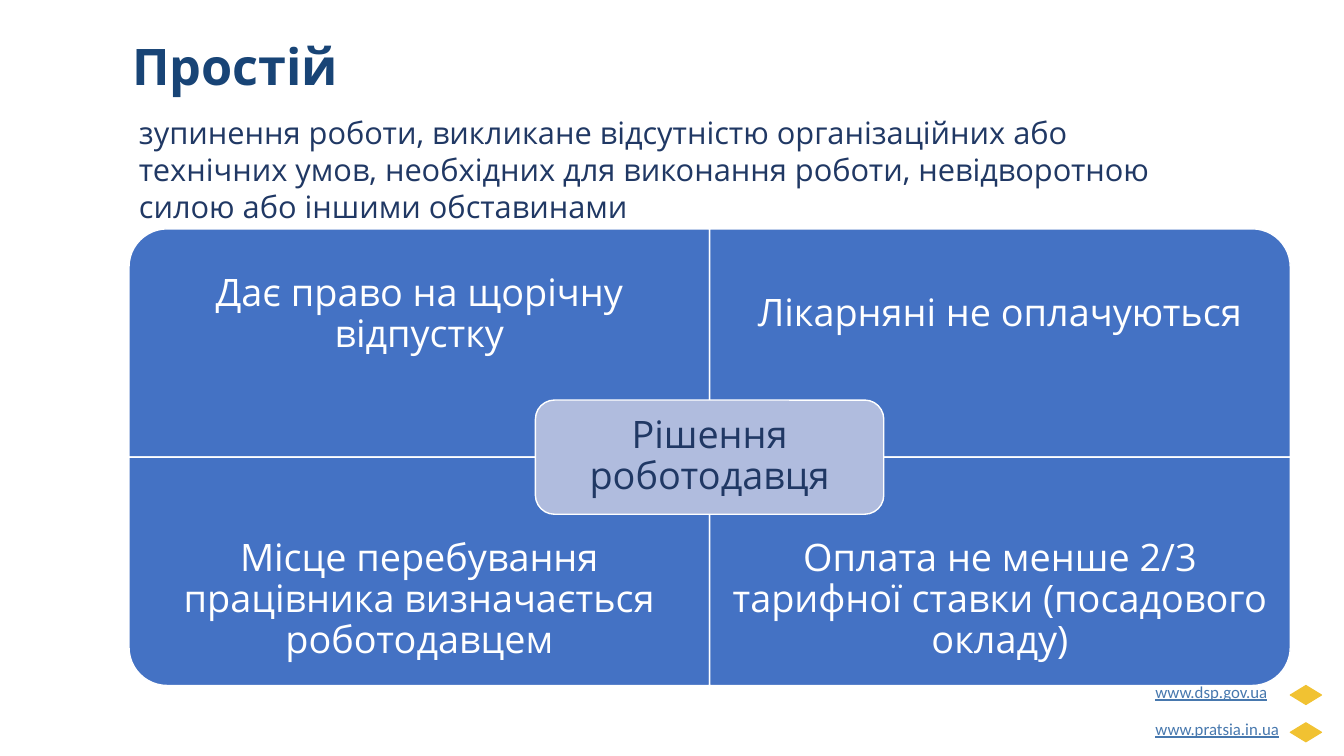
from pptx import Presentation
from pptx.dml.color import RGBColor
from pptx.enum.shapes import MSO_SHAPE
from pptx.enum.text import MSO_ANCHOR, PP_ALIGN
from pptx.util import Inches, Pt

DIAMOND = MSO_SHAPE.FLOWCHART_DECISION
ONE_ROUND_CORNER = MSO_SHAPE.ROUND_1_RECTANGLE
ROUNDED = MSO_SHAPE.ROUNDED_RECTANGLE
TOP, MIDDLE = MSO_ANCHOR.TOP, MSO_ANCHOR.MIDDLE
LEFT, CENTER = PP_ALIGN.LEFT, PP_ALIGN.CENTER

WHITE = RGBColor(0xFF, 0xFF, 0xFF)
NAVY = RGBColor(0x20, 0x38, 0x64)
TITLE_BLUE = RGBColor(0x18, 0x44, 0x76)
BLUE = RGBColor(0x44, 0x72, 0xC4)
LAVENDER = RGBColor(0xB0, 0xBC, 0xDE)
GOLD = RGBColor(0xF1, 0xC2, 0x32)
LINK_BLUE = RGBColor(0x47, 0x78, 0xAE)

# Matrix geometry in percent of the slide's width and height
MATRIX_LEFT, MATRIX_TOP = 9.6, 30.27
CELL_WIDTH, CELL_HEIGHT = 43.2, 30.2
TEXT_SHARE = 0.75  # part of a cell's height left free by the centre box

# Each cell: column, row, rotation that turns its round corner outwards, text
CELLS = [
    (0, 0, 270, "Дає право на щорічну відпустку"),
    (1, 0, 0, "Лікарняні не оплачуються"),
    (0, 1, 180, "Місце перебування працівника визначається роботодавцем"),
    (1, 1, 90, "Оплата не менше 2/3 тарифної ставки (посадового окладу)"),
]
SITES = [("www.dsp.gov.ua", 11.6), ("www.pratsia.in.ua", 13.1)]


def write_text(shape, text, size=27, color=WHITE, font="Open Sans", bold=False,
               underline=False, align=CENTER, anchor=MIDDLE, inset=(0.1, 0.05),
               line_spacing=0.9):
    frame = shape.text_frame
    frame.word_wrap = True
    frame.vertical_anchor = anchor
    frame.margin_left = frame.margin_right = Inches(inset[0])
    frame.margin_top = frame.margin_bottom = Inches(inset[1])
    paragraph = frame.paragraphs[0]
    paragraph.alignment = align
    paragraph.line_spacing = line_spacing
    run = paragraph.add_run()
    run.text = text
    run.font.name = font
    run.font.size = Pt(size)
    run.font.bold = bold
    run.font.underline = underline
    run.font.color.rgb = color


class SlideBuilder:
    """Places elements by percent of the slide's width and height."""

    def __init__(self, presentation):
        self.width = presentation.slide_width
        self.height = presentation.slide_height
        self.slide = presentation.slides.add_slide(presentation.slide_layouts[6])

    def place(self, left, top, width, height):
        return (int(self.width * left / 100), int(self.height * top / 100),
                int(self.width * width / 100), int(self.height * height / 100))

    def shape(self, kind, box, fill, line=WHITE, line_width=1, rotation=0):
        left, top, width, height = self.place(*box)
        if rotation % 180:  # swap the sides around the same centre
            left, top = left + (width - height) // 2, top + (height - width) // 2
            width, height = height, width
        shape = self.slide.shapes.add_shape(kind, left, top, width, height)
        shape.rotation = rotation
        shape.shadow.inherit = False
        shape.fill.solid()
        shape.fill.fore_color.rgb = fill
        shape.line.color.rgb = line
        shape.line.width = Pt(line_width)
        return shape

    def text(self, box, text, **text_format):
        shape = self.slide.shapes.add_textbox(*self.place(*box))
        write_text(shape, text, **text_format)

    def cell(self, column, row, rotation, text):
        left = MATRIX_LEFT + column * CELL_WIDTH
        top = MATRIX_TOP + row * CELL_HEIGHT
        self.shape(ONE_ROUND_CORNER, (left, top, CELL_WIDTH, CELL_HEIGHT), BLUE,
                   rotation=rotation)
        text_top = top + row * (1 - TEXT_SHARE) * CELL_HEIGHT
        self.text((left, text_top, CELL_WIDTH, TEXT_SHARE * CELL_HEIGHT), text,
                  inset=(0.21, 0.21))

    def site(self, index, address, width):
        offset = index * 4.93
        self.shape(DIAMOND, (96, 90.67 + offset, 2.33, 2.53), GOLD, GOLD, 0.75)
        self.text((85, 88.8 + offset, width, 6.27), address, size=12,
                  color=LINK_BLUE, font="Calibri", underline=True, align=LEFT,
                  anchor=TOP, inset=(0.13, 0.13), line_spacing=1.0)


def main():
    presentation = Presentation()
    presentation.slide_width = Inches(13.33)
    presentation.slide_height = Inches(7.5)
    builder = SlideBuilder(presentation)

    # Site addresses in the corner
    for index, (address, width) in enumerate(SITES):
        builder.site(index, address, width)

    # Title and definition
    heading = {"align": LEFT, "anchor": TOP, "line_spacing": 1.0}
    builder.text((8.85, 2.93, 75.2, 14), "Простій", size=36, color=TITLE_BLUE,
                 bold=True, inset=(0.13, 0.13), **heading)
    builder.text((MATRIX_LEFT, 14.4, 81.3, 16.13),
                 "зупинення роботи, викликане відсутністю організаційних або "
                 "технічних умов, необхідних для виконання роботи, невідворотною "
                 "силою або іншими обставинами", size=22, color=NAVY, **heading)

    # Matrix with the decision in its centre
    for cell in CELLS:
        builder.cell(*cell)
    center_width, center_height = 0.6 * CELL_WIDTH, 0.5 * CELL_HEIGHT
    decision = builder.shape(
        ROUNDED,
        (MATRIX_LEFT + CELL_WIDTH - center_width / 2,
         MATRIX_TOP + CELL_HEIGHT - center_height / 2, center_width, center_height),
        LAVENDER)
    write_text(decision, "Рішення роботодавця", color=NAVY, inset=(0.11, 0.11))

    presentation.save("out.pptx")


if __name__ == "__main__":
    main()
